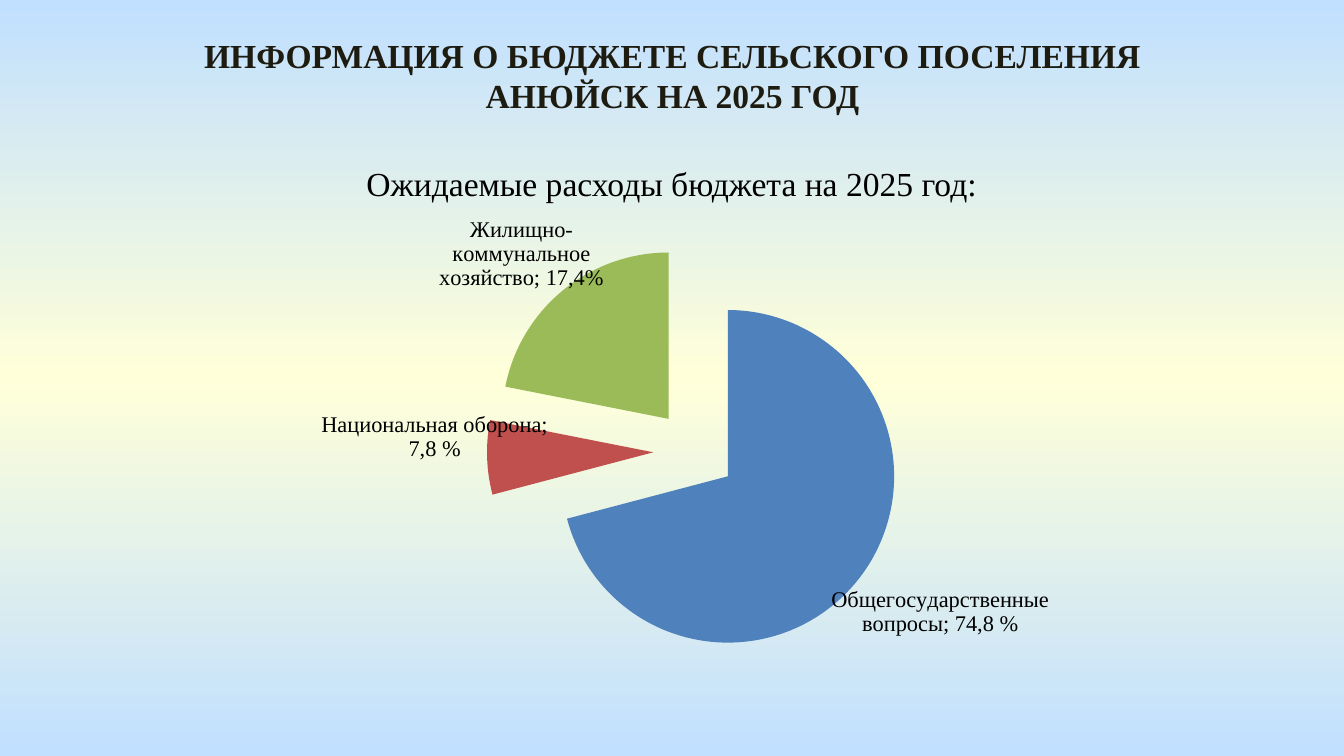
"""Build a slide on the planned 2025 budget spending of a rural settlement."""
from copy import deepcopy
from dataclasses import dataclass

from lxml import etree
from pptx import Presentation
from pptx.chart.data import CategoryChartData
from pptx.dml.color import RGBColor
from pptx.enum.chart import XL_CHART_TYPE, XL_LABEL_POSITION
from pptx.enum.text import MSO_ANCHOR, MSO_AUTO_SIZE, PP_ALIGN
from pptx.oxml.ns import qn
from pptx.util import Inches, Pt

EXPLODED_PIE = XL_CHART_TYPE.PIE_EXPLODED
OUTSIDE_END = XL_LABEL_POSITION.OUTSIDE_END
TOP = MSO_ANCHOR.TOP
FIT_SHAPE = MSO_AUTO_SIZE.SHAPE_TO_FIT_TEXT
CENTER = PP_ALIGN.CENTER
SERIF = "Times New Roman"
COLORS = {
    "sky": "C1E0FF",
    "cream": "FFFFD9",
    "heading": "1E1C11",
    "text": "000000",
    "blue": "4F81BD",
    "red": "C0504D",
    "green": "9BBB59",
}


@dataclass
class Expense:
    """One spending item with its label and label offset."""
    category: str
    share: float
    percent: str
    color: str
    dx: float
    dy: float


EXPENSES = [
    Expense("Общегосударственные вопросы", 0.709, "74,8 %", "blue", -0.03, 0.01),
    Expense("Национальная оборона", 0.072, "7,8 %", "red", 0.06, -0.04),
    Expense("Жилищно-коммунальное хозяйство", 0.219, "17,4%", "green", 0.04, 0.01),
]


def rgb(name: str) -> RGBColor:
    """Return a palette colour."""
    return RGBColor.from_string(COLORS[name])


def style_font(font, size: float, color: str, bold: bool = False) -> None:
    """Format a font in the slide's serif face."""
    font.name = SERIF
    font.size = Pt(size)
    font.bold = bold
    font.color.rgb = rgb(color)


def write_heading(shape, text: str, color: str, bold: bool) -> None:
    """Fill a shape with one centred heading."""
    frame = shape.text_frame
    frame.text = text
    frame.word_wrap = True
    frame.auto_size = FIT_SHAPE
    frame.vertical_anchor = TOP
    paragraph = frame.paragraphs[0]
    paragraph.alignment = CENTER
    style_font(paragraph.runs[0].font, 18, color, bold)


def paint_background(slide) -> None:
    """Apply the vertical three-stop gradient."""
    fill = slide.background.fill
    fill.gradient()
    fill.gradient_angle = 90
    first_stop = next(slide.element.iter(qn("a:gs")))
    first_stop.addnext(deepcopy(first_stop))
    for stop, position, color in zip(fill.gradient_stops, (0, 0.5, 1), ("sky", "cream", "sky")):
        stop.position = position
        stop.color.rgb = rgb(color)


def manual_layout(**settings) -> etree.ElementBase:
    """Return a chart layout element holding the given settings."""
    layout = etree.Element(qn("c:layout"))
    manual = etree.SubElement(layout, qn("c:manualLayout"))
    for tag, value in settings.items():
        etree.SubElement(manual, qn(f"c:{tag}")).set("val", str(value))
    return layout


def add_expense_pie(slide) -> None:
    """Draw the exploded pie with its labels."""
    data = CategoryChartData(number_format="0.0%")
    data.categories = [expense.category for expense in EXPENSES]
    data.add_series("Series 1", [expense.share for expense in EXPENSES])
    chart = slide.shapes.add_chart(
        EXPLODED_PIE, Inches(0.72), Inches(1.58), Inches(8.56), Inches(3.82), data
    ).chart
    chart.has_title = False
    chart.has_legend = False
    style_font(chart.font, 12, "text")

    plot = chart.plots[0]
    plot.vary_by_categories = True
    pie = plot.series[0]
    labels = pie.data_labels
    labels.show_value = True
    labels.show_category_name = True
    labels.number_format = "0.0%"
    labels.number_format_is_linked = False
    labels.position = OUTSIDE_END
    style_font(labels.font, 12, "text")
    for index, expense in enumerate(EXPENSES):
        point = pie.points[index]
        point.format.fill.solid()
        point.format.fill.fore_color.rgb = rgb(expense.color)
        label = point.data_label
        label.text_frame.text = f"{expense.category}; {expense.percent}"
        style_font(label.text_frame.paragraphs[0].runs[0].font, 12, "text")
        label.position = OUTSIDE_END

    root = chart.element
    for label, expense in zip(root.iter(qn("c:dLbl")), EXPENSES):
        label.find(qn("c:idx")).addnext(manual_layout(x=expense.dx, y=expense.dy))
    for label_group in root.iter(qn("c:dLbls")):
        for leader_lines in label_group.findall(qn("c:showLeaderLines")):
            label_group.remove(leader_lines)
        etree.SubElement(label_group, qn("c:showLeaderLines")).set("val", "0")
    plot_area = next(root.iter(qn("c:plotArea")))
    for default_layout in plot_area.findall(qn("c:layout")):
        plot_area.remove(default_layout)
    plot_area.insert(0, manual_layout(
        layoutTarget="inner", xMode="edge", yMode="edge", x=0.1, y=0.06, w=0.84, h=0.81))


def main() -> None:
    """Assemble and save the slide."""
    deck = Presentation()
    deck.slide_width = Inches(10)
    deck.slide_height = deck.slide_width * 9 // 16
    slide = deck.slides.add_slide(deck.slide_layouts[5])
    paint_background(slide)
    subtitle = slide.shapes.add_textbox(Inches(1.28), Inches(1.16), Inches(7.44), Inches(0.4))
    write_heading(subtitle, "Ожидаемые расходы бюджета на 2025 год:", "text", False)
    add_expense_pie(slide)
    title = slide.shapes.title
    title.left, title.top = Inches(0.91), Inches(0.21)
    title.width, title.height = Inches(8.19), Inches(0.71)
    write_heading(
        title, "ИНФОРМАЦИЯ О БЮДЖЕТЕ СЕЛЬСКОГО ПОСЕЛЕНИЯ АНЮЙСК НА 2025 ГОД", "heading", True)
    deck.save("out.pptx")


if __name__ == "__main__":
    main()
